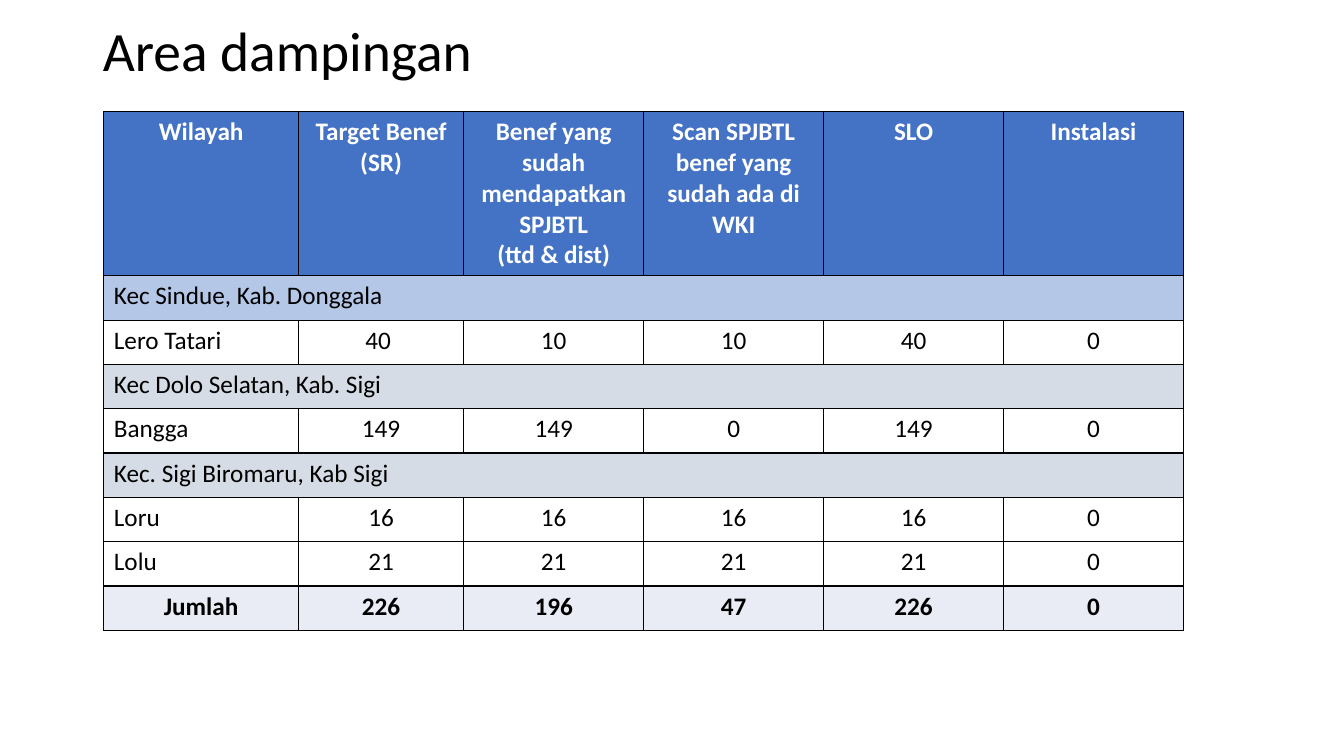
import pptx
import pptx.util
import pptx.oxml
import pptx.dml.color
import pptx.enum.text
from pptx.oxml.ns import qn
from lxml import etree

RGBColor = pptx.dml.color.RGBColor
ALIGN = pptx.enum.text.PP_ALIGN
ANCHOR = pptx.enum.text.MSO_ANCHOR
Inches, Pt = pptx.util.Inches, pptx.util.Pt

BLACK = RGBColor(0x00, 0x00, 0x00)
WHITE = RGBColor(0xFF, 0xFF, 0xFF)
BLUE = RGBColor(0x44, 0x72, 0xC4)
LIGHT_BLUE = RGBColor(0xB4, 0xC7, 0xE7)
GREY = RGBColor(0xD6, 0xDC, 0xE5)
PALE = RGBColor(0xE9, 0xEB, 0xF5)

FONT = "Calibri"
SLIDE_W, SLIDE_H = 13.33, 7.5

# Table grid
LEFT, TOP, WIDTH = 1.03, 1.11, 10.71
AREA_W, TARGET_W = 1.93, 1.64
STAGE_W = (WIDTH - AREA_W - TARGET_W) / 4
COLS = [AREA_W, TARGET_W] + [STAGE_W] * 4
HEAD_H, ROW_H = 1.62, 0.44

# Row kinds: fill, font colour, bold, alignment of the first cell
KINDS = {
    "head": (BLUE, WHITE, True, ALIGN.CENTER),
    "first": (LIGHT_BLUE, BLACK, False, ALIGN.LEFT),
    "district": (GREY, BLACK, False, ALIGN.LEFT),
    "village": (WHITE, BLACK, False, ALIGN.LEFT),
    "total": (PALE, BLACK, True, ALIGN.CENTER),
}
ROWS = [
    ("head", ["Wilayah", "Target Benef\n(SR)",
              "Benef yang sudah mendapatkan SPJBTL\n(ttd & dist)",
              "Scan SPJBTL benef yang sudah ada di WKI", "SLO", "Instalasi"]),
    ("first", ["Kec Sindue, Kab. Donggala"]),
    ("village", ["Lero Tatari", "40 ", "10", "10", "40", "0"]),
    ("district", ["Kec Dolo Selatan, Kab. Sigi"]),
    ("village", ["Bangga", "149", "149", "0", "149", "0"]),
    ("district", ["Kec. Sigi Biromaru, Kab Sigi"]),
    ("village", ["Loru", "16", "16", "16", "16", "0"]),
    ("village", ["Lolu", "21", "21", "21", "21", "0"]),
    ("total", ["Jumlah", "226", "196", "47", "226", "0"]),
]


def set_attrs(obj, values):
    for name, value in values.items():
        setattr(obj, name, value)


def write(tf, text, align, color, **font):
    """Fill a text frame, one paragraph per line."""
    tf.text = text
    for p in tf.paragraphs:
        p.alignment = align
        for r in p.runs:
            set_attrs(r.font, {"name": FONT, **font})
            r.font.color.rgb = color


def add_borders(cell, width=Pt(1)):
    tcPr = cell._tc.get_or_add_tcPr()
    for side in ("a:lnL", "a:lnR", "a:lnT", "a:lnB"):
        ln = etree.SubElement(tcPr, qn(side), w=str(width))
        fill = etree.SubElement(ln, qn("a:solidFill"))
        etree.SubElement(fill, qn("a:srgbClr"), val=str(BLACK))


def add_title(s, text):
    sp = s.shapes.title
    set_attrs(sp, {"left": Inches(0.92), "top": Inches(0.27),
                   "width": Inches(11.5), "height": Inches(0.53)})
    tf = sp.text_frame
    write(tf, text, ALIGN.LEFT, BLACK, size=Pt(39.6))
    set_attrs(tf, {"word_wrap": True, "vertical_anchor": ANCHOR.MIDDLE,
                   "auto_size": pptx.enum.text.MSO_AUTO_SIZE.NONE})
    tf.paragraphs[0].line_spacing = 0.9


def fill_row(table, i, kind, texts):
    fill, color, bold, first_align = KINDS[kind]
    for cell in table.rows[i].cells:
        add_borders(cell)
        cell.fill.solid()
        cell.fill.fore_color.rgb = fill
    # A district name spans the whole row
    if len(texts) == 1:
        table.cell(i, 0).merge(table.cell(i, len(COLS) - 1))
    for j, text in enumerate(texts):
        write(table.cell(i, j).text_frame, text,
              ALIGN.CENTER if j else first_align, color,
              size=Pt(18), bold=bold)


def add_area_table(s):
    heights = [HEAD_H] + [ROW_H] * (len(ROWS) - 1)
    frame = s.shapes.add_table(len(ROWS), len(COLS), Inches(LEFT), Inches(TOP),
                               Inches(WIDTH), Inches(sum(heights)))
    table = frame.table
    set_attrs(table, {"first_row": False, "horz_banding": False})
    for col, width in zip(table.columns, COLS):
        col.width = Inches(width)
    for row, height in zip(table.rows, heights):
        row.height = Inches(height)
    for i, (kind, texts) in enumerate(ROWS):
        fill_row(table, i, kind, texts)


def main():
    prs = pptx.Presentation()
    set_attrs(prs, {"slide_width": Inches(SLIDE_W),
                    "slide_height": Inches(SLIDE_H)})
    s = prs.slides.add_slide(prs.slide_layouts[5])
    add_title(s, "Area dampingan")
    add_area_table(s)
    prs.save("out.pptx")


if __name__ == "__main__":
    main()
